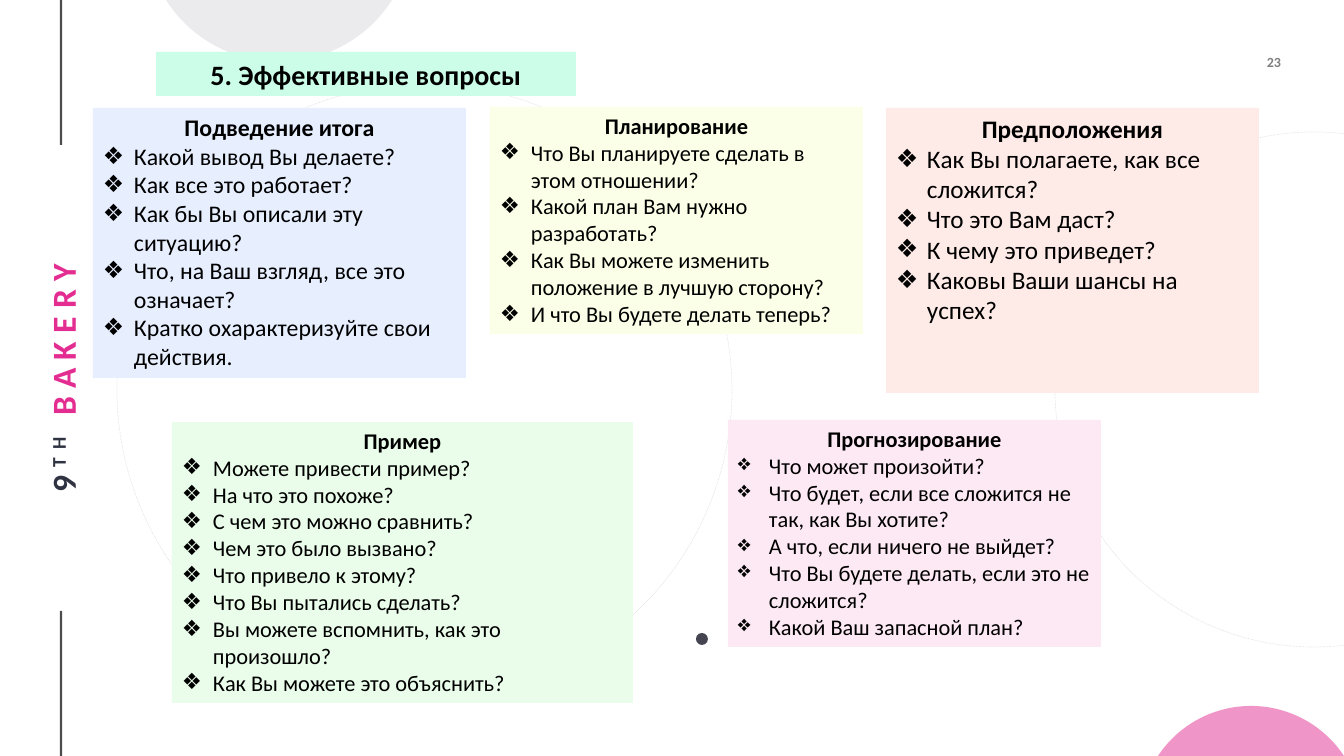
import math

import pptx
import pptx.dml.color
import pptx.enum.dml
import pptx.enum.shapes
import pptx.enum.text
import pptx.oxml
import pptx.oxml.ns
import pptx.util

EMU_PER_PX = 914400 / 100.8
FONT = "Calibri"
COLORS = {
    "black": "000000", "ink": "2F3342", "pink": "E32D91", "dot": "454551",
    "gray": "D8D9DC", "mint": "CBFDE8", "blue": "E7EFFF", "yellow": "FCFFE7",
    "peach": "FEEBE8", "green": "EAFCEA", "rose": "FDE9F4",
}
ALIGN = pptx.enum.text.PP_ALIGN
ANCHOR = pptx.enum.text.MSO_ANCHOR
SHAPE = pptx.enum.shapes.MSO_SHAPE


def px(n):
    return pptx.util.Emu(round(n * EMU_PER_PX))


def add_xml(parent, tag, **attrs):
    el = parent.makeelement(pptx.oxml.ns.qn(tag), attrs)
    parent.append(el)
    return el


def paint(fill, color, opacity=100):
    fill.solid()
    fill.fore_color.rgb = pptx.dml.color.RGBColor.from_string(COLORS[color])
    if opacity < 100:
        # The private element is the only way to reach the alpha setting.
        clr = fill._xPr.find(".//" + pptx.oxml.ns.qn("a:srgbClr"))
        add_xml(clr, "a:alpha", val=str(opacity * 1000))


class SlideBuilder:
    def __init__(self, s):
        self.s = s
        self.bodies = list(s.placeholders)[1:]

    def line(self, x1, y1, x2, y2):
        sp = self.s.shapes.add_connector(
            pptx.enum.shapes.MSO_CONNECTOR.STRAIGHT, px(x1), px(y1), px(x2), px(y2))
        sp.line.width = pptx.util.Pt(1.5)
        paint(sp.line.fill, "black", 70)
        add_xml(sp.element.spPr, "a:effectLst")

    def circle(self, x, y, w, h, fill=None):
        """Draw a filled circle, or a faint dotted ring when no fill is given."""
        sp = self.s.shapes.add_shape(SHAPE.OVAL, px(x), px(y), px(w), px(h))
        sp.shadow.inherit = False
        if fill:
            paint(sp.fill, fill)
            sp.line.fill.background()
        else:
            sp.fill.background()
            sp.line.width = pptx.util.Pt(0.5)
            paint(sp.line.fill, "black", 10)
            sp.line.dash_style = pptx.enum.dml.MSO_LINE.ROUND_DOT

    def cap(self, cx, base, half, height, fill):
        """Draw the part of a circle cut by a slide edge; negative height points up."""
        h = abs(height)
        r = (half ** 2 + h ** 2) / (2 * h)
        reach = math.asin(half / r)
        points = []
        for i in range(61):
            t = reach * (i / 30 - 1)
            y = base + math.copysign(r * math.cos(t) - r + h, height)
            points.append((px(cx + r * math.sin(t)), px(y)))
        fb = self.s.shapes.build_freeform(*points[0])
        fb.add_line_segments(points[1:], close=True)
        sp = fb.convert_to_shape()
        sp.shadow.inherit = False
        sp.line.fill.background()
        paint(sp.fill, fill, 50)

    def place(self, sp, x, y, w, h, fill=None, anchor=ANCHOR.TOP, inset=(10, 5)):
        """Bring a text shape to the front and set its frame."""
        self.s.shapes.element.append(sp.element)
        sp.left, sp.top, sp.width, sp.height = map(px, (x, y, w, h))
        if fill:
            paint(sp.fill, fill)
        tf = sp.text_frame
        tf.word_wrap = True
        tf.auto_size = pptx.enum.text.MSO_AUTO_SIZE.NONE
        tf.vertical_anchor = anchor
        tf.margin_left = tf.margin_right = px(inset[0])
        tf.margin_top = tf.margin_bottom = px(inset[1])
        return tf

    def style(self, p, size, bold, align, color="black", opacity=100):
        p.alignment = align
        p.line_spacing = 1.0
        p.space_before = p.space_after = pptx.util.Pt(0)
        for r in p.runs:
            r.font.name = FONT
            r.font.size = pptx.util.Pt(size)
            r.font.bold = bold
            paint(r.font.fill, color, opacity)

    def bullet(self, p, char=None):
        pPr = p._p.get_or_add_pPr()
        indent = px(31) if char else 0
        pPr.set("marL", str(indent))
        pPr.set("indent", str(-indent))
        if char:
            add_xml(pPr, "a:buChar", char=char)
        else:
            add_xml(pPr, "a:buNone")

    def text_box(self):
        return self.s.shapes.add_textbox(0, 0, px(1), px(1))

    def title(self, text, box, fill):
        tf = self.place(self.s.shapes.title, *box, fill)
        tf.text = text
        self.style(tf.paragraphs[0], 20, True, ALIGN.CENTER)

    def page_number(self, text, box):
        tf = self.place(self.text_box(), *box, anchor=ANCHOR.MIDDLE, inset=(0, 0))
        tf.text = text
        self.style(tf.paragraphs[0], 10, True, ALIGN.RIGHT, opacity=50)

    def side_label(self, parts, box):
        """Write spaced text up the side from (text, color, baseline) parts."""
        sp = self.text_box()
        tf = self.place(sp, *box, anchor=ANCHOR.MIDDLE, inset=(2, 2))
        sp.rotation = 270
        p = tf.paragraphs[0]
        for text, _, _ in parts:
            p.add_run().text = text
        self.style(p, 24, True, ALIGN.CENTER)
        for r, (_, color, baseline) in zip(p.runs, parts):
            paint(r.font.fill, color)
            rPr = r.font._element
            rPr.set("spc", "600")
            rPr.set("baseline", str(baseline * 1000))

    def card(self, box, fill, size, heading, questions):
        sp = self.bodies.pop(0) if self.bodies else self.text_box()
        tf = self.place(sp, *box, fill)
        tf.text = "\n".join([heading, *questions])
        for i, p in enumerate(tf.paragraphs):
            self.style(p, size, i == 0, ALIGN.LEFT if i else ALIGN.CENTER)
            self.bullet(p, "❖" if i else None)


CARDS = [
    ((93, 108, 373, 270), "blue", 17, "Подведение итога", [
        "Какой вывод Вы делаете?", "Как все это работает?",
        "Как бы Вы описали эту ситуацию?", "Что, на Ваш взгляд, все это означает?",
        "Кратко охарактеризуйте свои действия."]),
    ((490, 107, 373, 227), "yellow", 16, "Планирование", [
        "Что Вы планируете сделать в этом отношении?",
        "Какой план Вам нужно разработать?",
        "Как Вы можете изменить положение в лучшую сторону?",
        "И что Вы будете делать теперь?"]),
    ((886, 108, 373, 285), "peach", 18, "Предположения", [
        "Как Вы полагаете, как все сложится?", "Что это Вам даст?",
        "К чему это приведет?", "Каковы Ваши шансы на успех?"]),
    ((172, 422, 461, 281), "green", 16, "Пример", [
        "Можете привести пример?", "На что это похоже?",
        "С чем это можно сравнить?", "Чем это было вызвано?",
        "Что привело к этому?", "Что Вы пытались сделать?",
        "Вы можете вспомнить, как это произошло?", "Как Вы можете это объяснить?"]),
    ((728, 420, 373, 227), "rose", 16, "Прогнозирование", [
        "Что может произойти?", "Что будет, если все сложится не так, как Вы хотите?",
        "А что, если ничего не выйдет?", "Что Вы будете делать, если это не сложится?",
        "Какой Ваш запасной план?"]),
]


def main():
    prs = pptx.Presentation()
    prs.slide_width, prs.slide_height = px(1344), px(756)
    comparison = prs.slide_layouts[4]
    b = SlideBuilder(prs.slides.add_slide(comparison))

    b.line(61, 611, 61, 756)
    b.side_label([("9", "ink", 0), ("TH ", "ink", 30), ("BAKERY", "pink", 0)],
                 (-170, 356, 465, 45))
    b.page_number("23", (1204, 48, 77, 27))
    b.line(61, 0, 61, 145)
    b.circle(1055, 132, 518, 515)
    b.circle(117, 84, 615, 612)
    b.circle(696, 633, 12, 12, "dot")
    b.cap(1251, 756, 93, -50, "pink")
    b.cap(279, 0, 113, 62, "gray")

    b.title("5. Эффективные вопросы", (156, 52, 420, 44), "mint")
    for card in CARDS:
        b.card(*card)
    prs.save("out.pptx")


if __name__ == "__main__":
    main()
